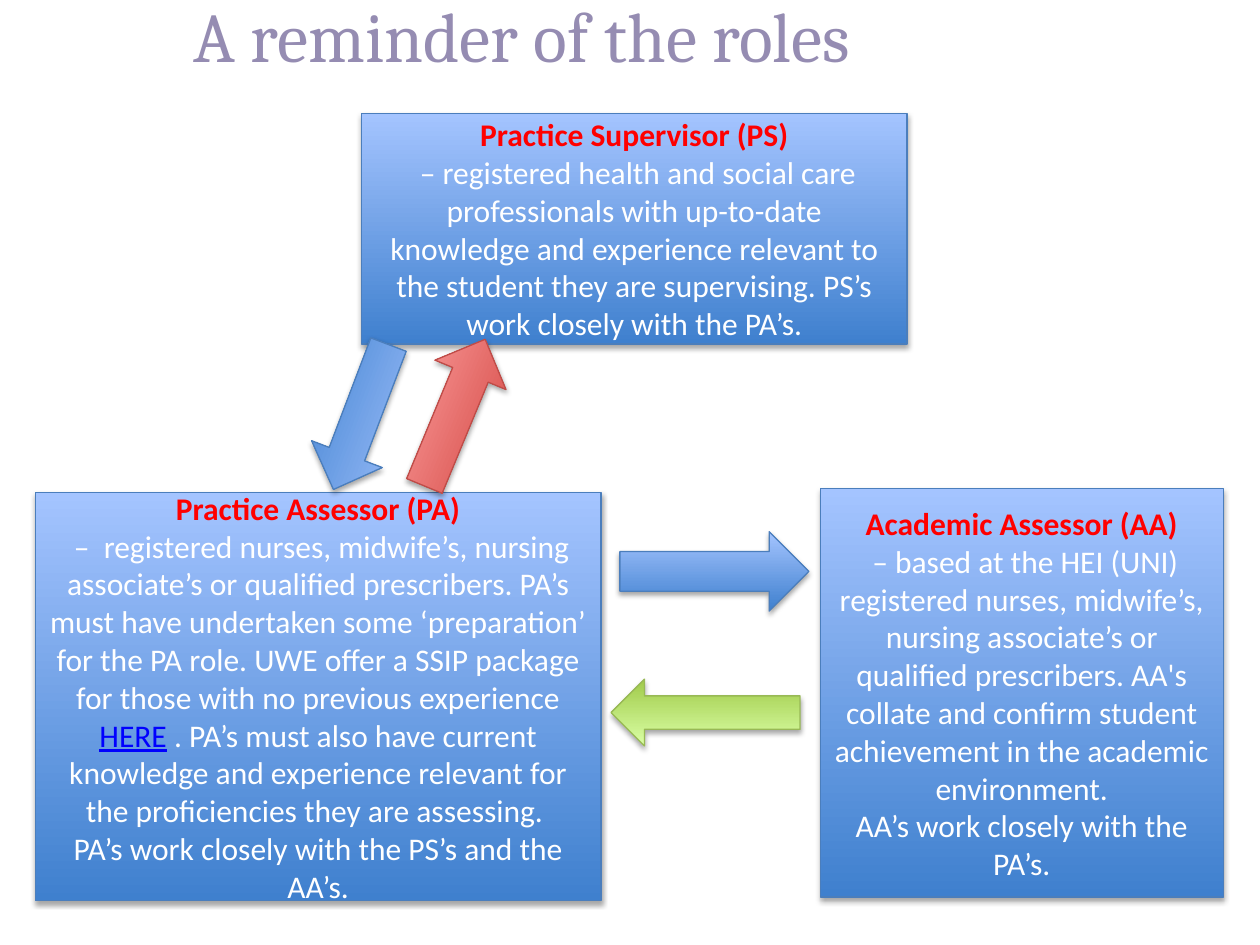
from lxml.etree import SubElement
from pptx import Presentation
from pptx.dml.color import RGBColor
from pptx.enum.shapes import MSO_SHAPE as Shape
from pptx.enum.text import MSO_ANCHOR as Anchor, MSO_AUTO_SIZE as AutoSize, PP_ALIGN as Align
from pptx.oxml.ns import qn
from pptx.util import Inches, Pt

BLUE = ("3F80CE", "A4C4FF", "4B7EBC")
GREEN = ("A0CA4A", "DAFFA5", "98B955")
RED = ("D1403C", "FFA6A5", "BF4C48")


def color(value):
    return RGBColor.from_string(value)


class RoleSlide:
    body_font = "Calibri"
    title_font = "Cambria"
    body_size = Pt(18)
    heading_color = "FF0000"
    text_color = "FFFFFF"
    link_color = "0000FF"

    def __init__(self, deck):
        self.page = deck.slides.add_slide(deck.slide_layouts[5])

    def add_title(self, text, left, top, width, height):
        title = self.page.shapes.title
        title.left, title.top = Inches(left), Inches(top)
        title.width, title.height = Inches(width), Inches(height)
        frame = title.text_frame
        frame.auto_size = AutoSize.NONE
        frame.vertical_anchor = Anchor.TOP
        frame.margin_left = frame.margin_right = 0
        frame.margin_top = frame.margin_bottom = 0
        para = frame.paragraphs[0]
        para.alignment = Align.CENTER
        para.line_spacing = Pt(42)
        span = para.add_run()
        span.text = text
        span.font.name = self.title_font
        span.font.size = Pt(40)
        span.font.color.rgb = color("958CB2")

    def add_panel(self, kind, place, palette):
        panel = self.page.shapes.add_shape(kind, *map(Inches, place))
        dark, light, edge = palette
        panel.fill.gradient()
        panel.fill.gradient_angle = 90
        for stop, shade in zip(panel.fill.gradient_stops, (dark, light)):
            stop.color.rgb = color(shade)
        for stop, position in zip(panel.fill.gradient_stops, (0, 1)):
            stop.position = position
        panel.line.color.rgb = color(edge)
        panel.line.width = Pt(0.75)
        self.add_shadow(panel)
        return panel

    def add_shadow(self, panel):
        panel.shadow.inherit = False
        effects = panel.element.spPr.find(qn("a:effectLst"))
        shadow = SubElement(effects, qn("a:outerShdw"), blurRad=str(Pt(3.1)),
                            dist=str(Pt(1.8)), dir="5400000", rotWithShape="0")
        black = SubElement(shadow, qn("a:srgbClr"), val="000000")
        SubElement(black, qn("a:alpha"), val="35000")

    def add_span(self, para, text, shade, bold=False, underline=None):
        span = para.add_run()
        span.text = text
        span.font.name = self.body_font
        span.font.size = self.body_size
        span.font.bold = bold
        span.font.underline = underline
        span.font.color.rgb = color(shade)

    def add_role(self, place, heading, *paragraphs):
        box = self.add_panel(Shape.RECTANGLE, place, BLUE)
        frame = box.text_frame
        frame.word_wrap = True
        frame.vertical_anchor = Anchor.MIDDLE
        para = frame.paragraphs[0]
        para.alignment = Align.CENTER
        self.add_span(para, heading, self.heading_color, bold=True)
        for number, pieces in enumerate(paragraphs):
            para = frame.add_paragraph()
            para.alignment = Align.CENTER
            if number == 0:
                self.add_span(para, " ", self.heading_color, bold=True)
            for piece in pieces:
                if piece == "HERE":
                    self.add_span(para, piece, self.link_color, underline=True)
                else:
                    self.add_span(para, piece, self.text_color)

    def add_arrow(self, place, palette, rotation=0):
        arrow = self.add_panel(Shape.RIGHT_ARROW, place, palette)
        arrow.rotation = rotation


def main():
    deck = Presentation()
    deck.slide_width, deck.slide_height = Inches(10), Inches(7.5)
    slide = RoleSlide(deck)
    slide.add_title("A reminder of the roles", 0.28, 0.02, 7.72, 0.69)

    slide.add_role(
        (2.87, 0.9, 4.33, 1.83), "Practice Supervisor (PS)",
        ["– registered health and social care professionals with up-to-date "
         "knowledge and experience relevant to the student they are supervising. "
         "PS’s work closely with the PA’s."])
    slide.add_role(
        (0.28, 3.91, 4.49, 3.24), "Practice Assessor (PA)",
        ["–  registered nurses, midwife’s, nursing associate’s or qualified "
         "prescribers. PA’s must have undertaken some ‘preparation’ for the PA role. "
         "UWE offer a SSIP package for those with no previous experience ",
         "HERE",
         " . PA’s must also have current knowledge and experience relevant for "
         "the proficiencies they are assessing. "],
        ["PA’s work closely with the PS’s and the AA’s."])
    slide.add_role(
        (6.51, 3.88, 3.2, 3.24), "Academic Assessor (AA)",
        ["– based at the HEI (UNI) registered nurses, midwife’s, nursing "
         "associate’s or qualified prescribers. AA's collate and confirm student "
         "achievement in the academic environment."],
        ["AA’s work closely with the PA’s."])

    slide.add_arrow((2.25, 3.01, 1.23, 0.6), BLUE, 110.8)
    slide.add_arrow((4.92, 4.22, 1.5, 0.63), BLUE)
    slide.add_arrow((4.85, 5.39, 1.5, 0.53), GREEN, 180)
    slide.add_arrow((2.98, 2.97, 1.26, 0.61), RED, 292.5)
    deck.save("out.pptx")


if __name__ == "__main__":
    main()
